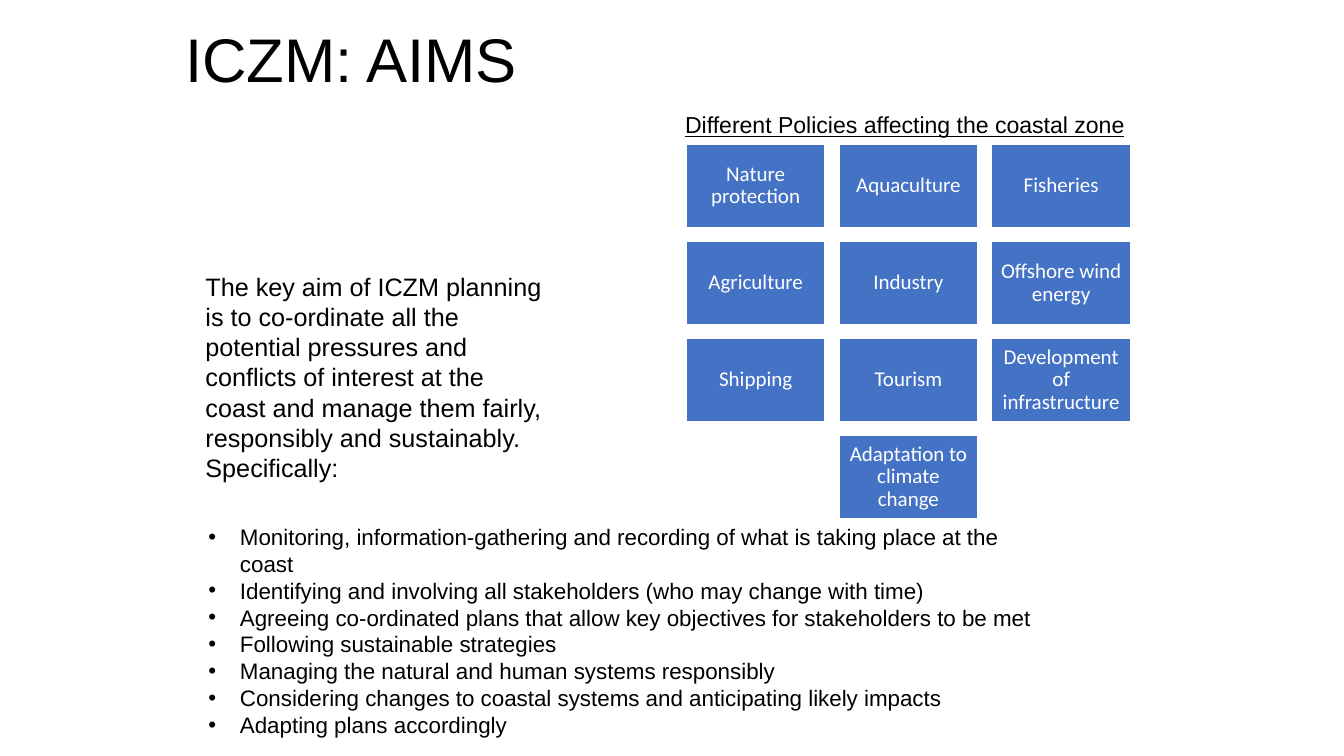
from lxml.etree import SubElement
from pptx import Presentation
from pptx.dml.color import RGBColor
from pptx.enum.shapes import MSO_SHAPE
from pptx.enum.text import MSO_ANCHOR, PP_ALIGN
from pptx.oxml.ns import qn
from pptx.util import Pt

BLACK = RGBColor(0x00, 0x00, 0x00)
WHITE = RGBColor(0xFF, 0xFF, 0xFF)
BLUE = RGBColor(0x44, 0x72, 0xC4)

KEY_AIM = (
    "The key aim of ICZM planning is to co-ordinate all the potential pressures "
    "and conflicts of interest at the coast and manage them fairly, responsibly "
    "and sustainably. Specifically:"
)
POLICIES = [
    "Nature protection", "Aquaculture", "Fisheries",
    "Agriculture", "Industry", "Offshore wind energy",
    "Shipping", "Tourism", "Development of infrastructure",
    "Adaptation to climate change",
]
AIMS = [
    "Monitoring, information-gathering and recording of what is taking place at the coast",
    "Identifying and involving all stakeholders (who may change with time)",
    "Agreeing co-ordinated plans that allow key objectives for stakeholders to be met",
    "Following sustainable strategies",
    "Managing the natural and human systems responsibly",
    "Considering changes to coastal systems and anticipating likely impacts",
    "Adapting plans accordingly",
]


def add_run(p, text, size, color=BLACK, name="Arial"):
    r = p.add_run()
    r.text = text
    r.font.size = Pt(size)
    r.font.name = name
    r.font.color.rgb = color
    return r


def add_text_box(slide, box):
    tf = slide.shapes.add_textbox(*map(Pt, box)).text_frame
    tf.word_wrap = True
    return tf


def add_title(slide, box, text):
    tf = add_text_box(slide, box)
    tf.vertical_anchor = MSO_ANCHOR.MIDDLE
    p = tf.paragraphs[0]
    p.line_spacing = 0.9
    add_run(p, text, 44)


def add_key_aim(slide, box, text):
    add_run(add_text_box(slide, box).paragraphs[0], text, 18)


def add_policy_tile(slide, box, text):
    sp = slide.shapes.add_shape(MSO_SHAPE.RECTANGLE, *map(Pt, box))
    sp.shadow.inherit = False
    sp.fill.solid()
    sp.fill.fore_color.rgb = BLUE
    sp.line.color.rgb = WHITE
    sp.line.width = Pt(1)
    tf = sp.text_frame
    tf.word_wrap = True
    tf.vertical_anchor = MSO_ANCHOR.MIDDLE
    tf.margin_left = tf.margin_right = tf.margin_top = tf.margin_bottom = Pt(4.5)
    p = tf.paragraphs[0]
    p.alignment = PP_ALIGN.CENTER
    p.line_spacing = 0.9
    add_run(p, text, 15, WHITE, "Calibri")


def add_policies(slide, box, heading, policies, columns=3, gap=9.9):
    left, top, width, height = box
    heading_box = (left - 7.9, top - 27.4, width + 28, 27.4)
    p = add_text_box(slide, heading_box).paragraphs[0]
    add_run(p, heading, 16.5).font.underline = True

    rows = [policies[i:i + columns] for i in range(0, len(policies), columns)]
    tile_w = (width - gap * (columns - 1)) / columns
    tile_h = (height - gap * (len(rows) - 1)) / len(rows)
    for i, row in enumerate(rows):
        indent = (columns - len(row)) * (tile_w + gap) / 2
        for j, policy in enumerate(row):
            x = left + indent + j * (tile_w + gap)
            y = top + i * (tile_h + gap)
            add_policy_tile(slide, (x, y, tile_w, tile_h), policy)


def add_aims(slide, box, aims):
    tf = add_text_box(slide, box)
    for i, aim in enumerate(aims):
        p = tf.add_paragraph() if i else tf.paragraphs[0]
        p.level = 1
        add_run(p, aim, 16)
        pPr = p._p.get_or_add_pPr()
        pPr.set("marL", str(Pt(58.5)))
        pPr.set("indent", str(Pt(-22.5)))
        SubElement(pPr, qn("a:buFont")).set("typeface", "Arial")
        SubElement(pPr, qn("a:buChar")).set("char", "•")


def main():
    prs = Presentation()
    prs.slide_width = Pt(960)
    prs.slide_height = Pt(540)
    slide = prs.slides.add_slide(prs.slide_layouts[6])
    add_policies(slide, (490.2, 102.9, 317.4, 267.7),
                 "Different Policies affecting the coastal zone", POLICIES)
    add_aims(slide, (105.8, 370.1, 650, 163), AIMS)
    add_key_aim(slide, (139.7, 190.1, 255, 160), KEY_AIM)
    add_title(slide, (125.3, 0, 612, 90), "ICZM: AIMS")
    prs.save("out.pptx")


if __name__ == "__main__":
    main()
